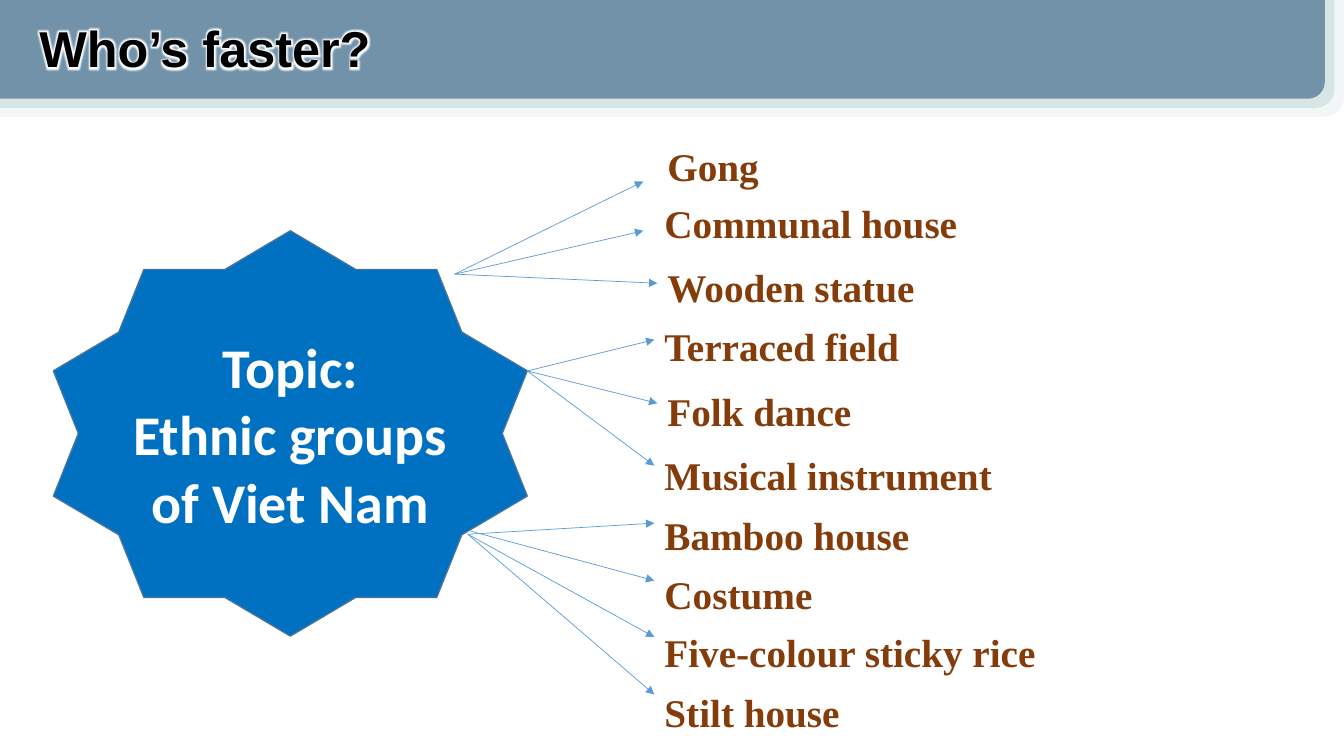
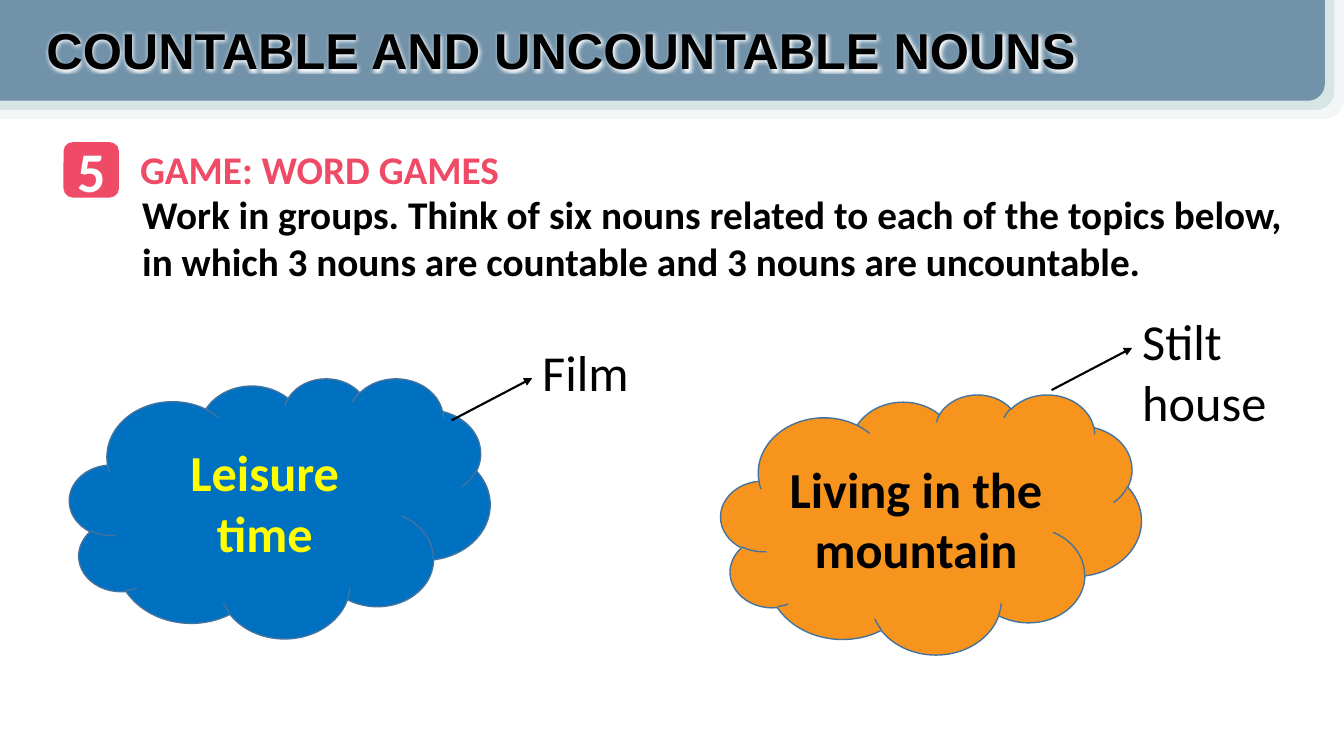
"""Build two English lesson slides: a topic word race and a noun game."""
from lxml import etree
from pptx import Presentation
from pptx import util as u
from pptx.dml import color
from pptx.enum import shapes, text
from pptx.oxml import ns, xmlchemy

THEME = {
    "black": "000000", "white": "FFFFFF", "yellow": "FFFF00",
    "blue": "0070C0", "orange": "F7941E", "pink": "EF4B66", "brown": "843C0B",
    "outline": "43739E", "arrow": "5B9BD5",
    "bands": ["F3F6F6", "D8E5E5", "7192A9"],
    "heading": 36, "large": 40, "label": 36, "body": 28,
    "title_font": "Arial", "font": "Calibri", "list_font": "Times New Roman",
}
SHAPE, ALIGN = shapes.MSO_SHAPE, text.PP_ALIGN


def rgb(name):
    return color.RGBColor.from_string(THEME.get(name, name))


def write(sp, box, lines, size, fill, font="font", bold=True,
          align=ALIGN.LEFT, anchor=text.MSO_ANCHOR.TOP):
    for name, value in zip(("left", "top", "width", "height"), box):
        setattr(sp, name, u.Inches(value))
    tf = sp.text_frame
    frame = {"text": "\n".join(lines), "word_wrap": True, "vertical_anchor": anchor,
             "auto_size": text.MSO_AUTO_SIZE.NONE}
    for name, value in frame.items():
        setattr(tf, name, value)
    style = {"size": u.Pt(THEME[size]), "name": THEME[font], "bold": bold}
    for p in tf.paragraphs:
        p.alignment, p.space_before = align, u.Pt(0)
        if sp.is_placeholder:
            pPr = p._p.get_or_add_pPr()
            pPr.set("marL", "0")
            pPr.set("indent", "0")
            etree.SubElement(pPr, ns.qn("a:buNone"))
        for r in p.runs:
            for name, value in style.items():
                setattr(r.font, name, value)
            r.font.color.rgb = rgb(fill)
    return tf


prs = Presentation()
prs.slide_width, prs.slide_height = u.Inches(13.33), u.Inches(7.5)

headings = [
    ("Who’s faster?", (0.29, 0.12, 4.52, 0.71), -0.02),
    ("COUNTABLE AND UNCOUNTABLE NOUNS", (0.36, 0.14, 10.68, 0.71), 0),
]
for heading, box, band_top in headings:
    s = prs.slides.add_slide(prs.slide_layouts[1])
    bands = s.shapes.add_group_shape()
    for i, fill in enumerate(THEME["bands"]):
        sp = bands.shapes.add_shape(
            SHAPE.ROUND_1_RECTANGLE, 0, u.Inches(band_top),
            u.Inches(13.33 - 0.095 * i), u.Inches(1.18 - 0.09 * i))
        sp.shadow.inherit = False
        sp.fill.solid()
        sp.fill.fore_color.rgb = rgb(fill)
        sp.line.fill.background()
        sp._element.spPr.xfrm.set("flipV", "1")
    s.shapes._spTree.insert(2, bands._element)
    tf = write(s.shapes.title, box, [heading], "heading", "black", "title_font")
    glow = xmlchemy.OxmlElement("a:effectLst")
    halo = etree.SubElement(glow, ns.qn("a:glow"), rad="63500")
    etree.SubElement(halo, ns.qn("a:srgbClr"), val=THEME["white"])
    tf.paragraphs[0].runs[0].font._element.find(ns.qn("a:solidFill")).addnext(glow)
race, game = prs.slides

words = [
    ("Gong", 0.03, 1.36), ("Communal house", 0, 1.91), ("Wooden statue", 0.03, 2.52),
    ("Terraced field", 0, 3.09), ("Folk dance", 0.03, 3.71),
    ("Musical instrument", 0, 4.33), ("Bamboo house", 0, 4.9), ("Costume", 0, 5.47),
    ("Five-colour sticky rice", 0, 6.03), ("Stilt house", 0, 6.6),
]
tf = write(race.placeholders[1], (6.49, 1.36, 5.48, 5.81), [w[0] for w in words],
           "body", "brown", "list_font")
line_height = 1.15 * THEME["body"]
for p, (_, indent, top), (_, _, last) in zip(tf.paragraphs[1:], words[1:], words):
    p.space_before = u.Pt(72 * (top - last) - line_height)
for p, (_, indent, _) in zip(tf.paragraphs, words):
    p._p.pPr.set("marL", str(u.Inches(indent)))

write(game.placeholders[1], (1.31, 1.84, 11.83, 1.04),
      ["Work in groups. Think of six nouns related to each of the topics below, "
       "in which 3 nouns are countable and 3 nouns are uncountable."], "body", "black")

topics = [
    (race, SHAPE.STAR_10_POINT, (0.53, 2.29, 4.7, 4.02),
     ["Topic:", "Ethnic groups of Viet Nam"], "large", "white", "blue", "outline"),
    (game, SHAPE.ROUNDED_RECTANGLE, (0.63, 1.41, 0.55, 0.55),
     ["5"], "large", "white", "pink", None),
    (game, SHAPE.CLOUD, (0.69, 3.75, 4.17, 2.58),
     ["Leisure time"], "label", "yellow", "blue", "outline"),
    (game, SHAPE.CLOUD, (7.15, 3.91, 4.17, 2.58),
     ["Living in the mountain"], "label", "black", "orange", "outline"),
]
for s, kind, box, lines, size, ink, fill, outline in topics:
    sp = s.shapes.add_shape(kind, *map(u.Inches, box))
    sp.shadow.inherit = False
    sp.fill.solid()
    sp.fill.fore_color.rgb = rgb(fill)
    if outline:
        sp.line.color.rgb = rgb(outline)
        sp.line.width = u.Pt(1)
    else:
        sp.line.fill.background()
    write(sp, box, lines, size, ink, align=ALIGN.CENTER, anchor=text.MSO_ANCHOR.MIDDLE)

labels = [
    ("GAME: WORD GAMES", (1.29, 1.39, 3.79, 0.57), "body", "pink", True),
    ("Film", (5.28, 3.33, 1.46, 0.71), "label", "black", False),
    ("Stilt house", (11.23, 3.03, 1.76, 1.31), "label", "black", False),
]
for label, box, size, ink, bold in labels:
    sp = game.shapes.add_textbox(*map(u.Inches, box))
    write(sp, box, [label], size, ink, bold=bold)

arrows = [
    (race, (4.51, 2.72), [(6.38, 1.8), (6.38, 2.29), (6.52, 2.81)], "arrow", 0.5),
    (race, (5.23, 3.68), [(6.49, 3.37), (6.52, 4), (6.49, 4.62)], "arrow", 0.5),
    (race, (4.64, 5.3), [(6.49, 5.19), (6.49, 6.32), (6.49, 6.89)], "arrow", 0.5),
    (race, (4.67, 5.27), [(6.49, 5.76)], "arrow", 0.5),
    (game, (4.48, 4.17), [(5.28, 3.75)], "black", 1.5),
    (game, (10.43, 3.87), [(11.23, 3.45)], "black", 1.5),
]
for s, start, ends, ink, width in arrows:
    for end in ends:
        sp = s.shapes.add_connector(shapes.MSO_CONNECTOR.STRAIGHT,
                                    *map(u.Inches, start + end))
        sp.line.color.rgb = rgb(ink)
        sp.line.width = u.Pt(width)
        etree.SubElement(sp.line._get_or_add_ln(), ns.qn("a:tailEnd"), type="triangle")
        etree.SubElement(sp._element.spPr, ns.qn("a:effectLst"))

prs.save("out.pptx")
